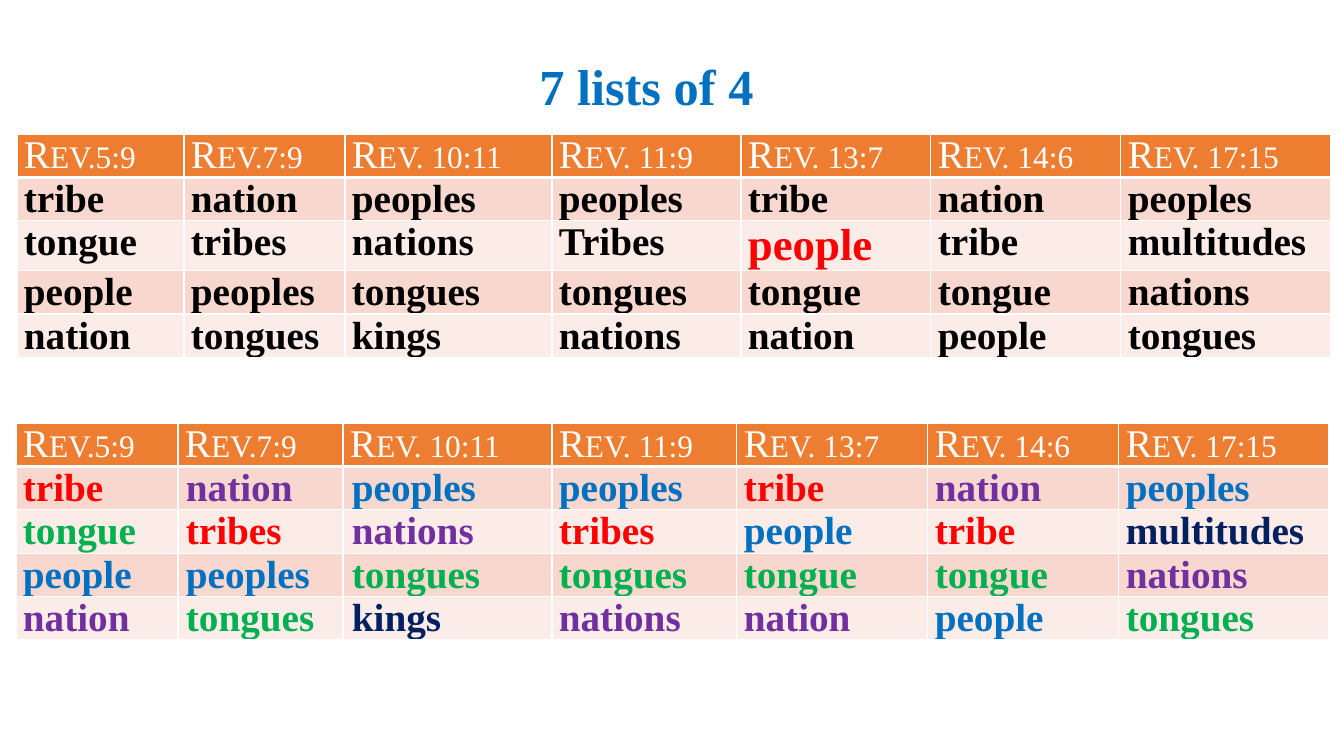
from lxml.etree import SubElement
from pptx import Presentation
from pptx.dml.color import RGBColor
from pptx.enum.text import PP_ALIGN
from pptx.oxml.ns import qn
from pptx.util import Pt

EMU_PER_PX = 914400 / 100.8
FONT = "Times New Roman"
COLORS = {
    "header": "ED7D31", "odd_row": "F8D7CE", "even_row": "FCECE8",
    "white": "FFFFFF", "black": "000000", "title": "0070C0", "highlight": "FF0000",
    "tribe": "FF0000", "nation": "7030A0", "people": "0070C0",
    "tongue": "00B050", "king": "002060", "multitude": "002060",
}
VERSES = ["Rev.5:9", "Rev.7:9", "Rev. 10:11", "Rev. 11:9",
          "Rev. 13:7", "Rev. 14:6", "Rev. 17:15"]
WORDS = [
    ["tribe", "nation", "peoples", "peoples", "tribe", "nation", "peoples"],
    ["tongue", "tribes", "nations", "tribes", "people", "tribe", "multitudes"],
    ["people", "peoples", "tongues", "tongues", "tongue", "tongue", "nations"],
    ["nation", "tongues", "kings", "nations", "nation", "people", "tongues"],
]
HIGHLIGHT = (2, 4)
ROW_HEIGHT = 43
COLUMN_INDENTS = {1: 1, 2: 2}
LISTS = [
    {"left": 17, "top": 134, "by_word": False,
     "widths": [167, 161, 207, 189, 190, 190, 210]},
    {"left": 16, "top": 423, "by_word": True,
     "widths": [162, 165, 209, 185, 191, 191, 210]},
]


def px(length):
    return round(length * EMU_PER_PX)


def style_run(run, size, color, bold):
    run.font.name = FONT
    run.font.size = Pt(size)
    run.font.bold = bold
    run.font.color.rgb = RGBColor.from_string(COLORS[color])


prs = Presentation()
prs.slide_width, prs.slide_height = px(1344), px(756)
slide = prs.slides.add_slide(prs.slide_layouts[6])

for verse_list in LISTS:
    rows = [VERSES] + WORDS
    widths = verse_list["widths"]
    table = slide.shapes.add_table(
        len(rows), len(VERSES), px(verse_list["left"]), px(verse_list["top"]),
        px(sum(widths)), px(ROW_HEIGHT * len(rows))).table
    for column, width in zip(table.columns, widths):
        column.width = px(width)

    for r, row in enumerate(rows):
        table.rows[r].height = px(ROW_HEIGHT)
        is_header = r == 0
        fill = "header" if is_header else "odd_row" if r % 2 else "even_row"
        for c, word in enumerate(row):
            cell = table.cell(r, c)
            cell.margin_left = cell.margin_right = px(7)
            cell.margin_top = cell.margin_bottom = 0

            for side in ("lnL", "lnR", "lnT", "lnB"):
                width = Pt(3 if is_header and side == "lnB" else 1)
                border = SubElement(cell._tc.get_or_add_tcPr(), qn(f"a:{side}"), w=str(width))
                SubElement(SubElement(border, qn("a:solidFill")), qn("a:srgbClr"),
                           val=COLORS["white"])
            cell.fill.solid()
            cell.fill.fore_color.rgb = RGBColor.from_string(COLORS[fill])

            size, color = 28, "white" if is_header else "black"
            if verse_list["by_word"] and not is_header:
                color = word.rstrip("s")
            elif not verse_list["by_word"] and (r, c) == HIGHLIGHT:
                size, color = 32, "highlight"
            elif not verse_list["by_word"] and (r, c) == (2, 3):
                word = word.capitalize()

            paragraph = cell.text_frame.paragraphs[0]
            paragraph.text = word
            run = paragraph.runs[0]
            style_run(run, size, color, bold=not is_header)
            if is_header:
                run.font._element.set("cap", "small")
            elif verse_list["by_word"] and c in COLUMN_INDENTS:
                paragraph._p.get_or_add_pPr().set("marL", str(px(COLUMN_INDENTS[c])))

title = slide.shapes.add_textbox(px(504), px(50), px(285), px(72)).text_frame
title.word_wrap = True
title.text = "7 lists of 4"
title.paragraphs[0].alignment = PP_ALIGN.CENTER
style_run(title.paragraphs[0].runs[0], 36, "title", bold=True)

prs.save("out.pptx")
